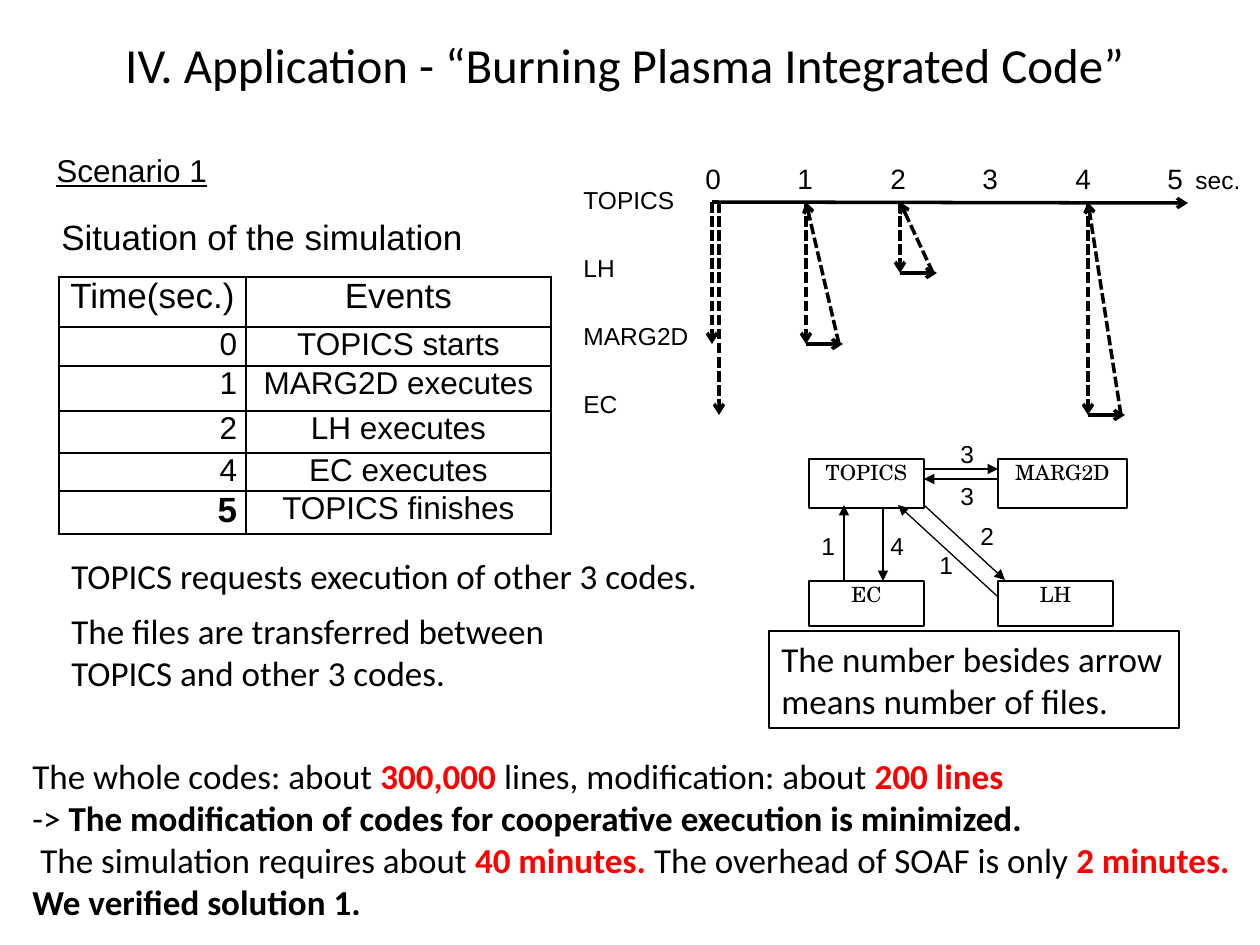
from lxml import etree
from pptx import Presentation
from pptx.dml.color import RGBColor
from pptx.enum.dml import MSO_LINE
from pptx.enum.shapes import MSO_CONNECTOR, MSO_SHAPE
from pptx.enum.text import MSO_ANCHOR, PP_ALIGN
from pptx.oxml.ns import qn
from pptx.util import Emu, Pt

PX = 914400 / 126
HEX = {"ink": "000000", "paper": "FFFFFF", "alert": "FF0000"}
SANS, BODY, SERIF = "Arial", "Calibri", "TeX Gyre Schola"
LEFT, MID, RIGHT = PP_ALIGN.LEFT, PP_ALIGN.CENTER, PP_ALIGN.RIGHT
TOP, CENTRE = MSO_ANCHOR.TOP, MSO_ANCHOR.MIDDLE
RECT, LINE, DASH = MSO_SHAPE.RECTANGLE, MSO_CONNECTOR.STRAIGHT, MSO_LINE.SQUARE_DOT


def px(n):
    return Emu(round(n * PX))


def rgb(name):
    return RGBColor.from_string(HEX[name])


def style(run, size, font, color="ink", bold=False):
    run.font.size, run.font.name, run.font.bold = Pt(size), font, bold
    run.font.color.rgb = rgb(color)


def fill_text(frame, text, size, font, align=LEFT, bold=False):
    frame.text = text
    for para in frame.paragraphs:
        para.alignment = align
        for run in para.runs:
            style(run, size, font, bold=bold)


def label(slide, box, text, size, font=SANS, align=LEFT, wrap=False, anchor=TOP):
    frame = slide.shapes.add_textbox(*map(px, box)).text_frame
    frame.word_wrap, frame.vertical_anchor = wrap, anchor
    fill_text(frame, text, size, font, align)
    return frame


def panel(slide, box, weight=0.75, fill=None):
    shape = slide.shapes.add_shape(RECT, *map(px, box))
    shape.shadow.inherit = False
    if fill:
        shape.fill.solid()
        shape.fill.fore_color.rgb = rgb(fill)
    else:
        shape.fill.background()
    shape.line.color.rgb, shape.line.width = rgb("ink"), Pt(weight)
    shape.text_frame.vertical_anchor = TOP
    return shape.text_frame


def arrow(slide, x, y, start, end, weight, head, dash=None):
    ends = (x + start[0], y + start[1], x + end[0], y + end[1])
    link = slide.shapes.add_connector(LINE, *map(px, ends))
    link.line.color.rgb, link.line.width = rgb("ink"), Pt(weight)
    if dash:
        link.line.dash_style = dash
    etree.SubElement(link.line._get_or_add_ln(), qn("a:tailEnd"), type=head)
    etree.SubElement(link._element.spPr, qn("a:effectLst"))


def edge_cell(cell):
    props = cell._tc.get_or_add_tcPr()
    for i, side in enumerate(("lnL", "lnR", "lnT", "lnB")):
        edge = etree.Element(qn("a:" + side), w=str(Pt(1)))
        paint = etree.SubElement(edge, qn("a:solidFill"))
        etree.SubElement(paint, qn("a:srgbClr"), val=HEX["ink"])
        props.insert(i, edge)


def add_events(slide, x, y):
    # Headings over the table
    frame = label(slide, (x - 15, y - 132, 178, 50), "Scenario 1", 18)
    frame.paragraphs[0].runs[0].font.underline = True
    label(slide, (x - 10, y - 68, 430, 55), "Situation of the simulation", 20)
    # Event table
    rows = [("Time(sec.)", "Events"), ("0", "TOPICS starts"),
            ("1", "MARG2D executes"), ("2", "LH executes"),
            ("4", "EC executes"), ("5", "TOPICS finishes")]
    highs, wides = (50, 39, 45, 42, 38, 43), (187, 305)
    grid = slide.shapes.add_table(
        len(rows), 2, px(x), px(y), px(sum(wides)), px(sum(highs))).table
    for col, wide in zip(grid.columns, wides):
        col.width = px(wide)
    for r, (row, high) in enumerate(zip(rows, highs)):
        grid.rows[r].height = px(high)
        for c, text in enumerate(row):
            cell = grid.cell(r, c)
            cell.margin_left = cell.margin_right = px(9)
            cell.margin_top = cell.margin_bottom = 0
            cell.fill.background()
            last = r == len(rows) - 1 and c == 0
            fill_text(cell.text_frame, text, 20 if r == 0 or last else 18, SANS,
                      RIGHT if r and c == 0 else MID, last)
            edge_cell(cell)


def add_times(slide, x, y):
    axis, lane, zero, tick = 47, 71, 141, 94
    # Lane names and second marks
    for i, (name, wide) in enumerate(
            (("TOPICS", 117), ("LH", 57), ("MARG2D", 131), ("EC", 60))):
        label(slide, (x, y + 24 + 68 * i, wide, 43), name, 14)
    for i in range(6):
        label(slide, (x + 122 + 185 * i // 2, y, 42, 48), str(i), 16)
    label(slide, (x + 612, y + 4, 71, 43), "sec.", 14)
    # Time axis and the two starts
    arrow(slide, x, y, (zero, axis), (617, axis + 1), 2, "arrow")
    for left, row in ((zero, 2), (zero + 7, 3)):
        arrow(slide, x, y, (left, axis), (left, axis + row * lane), 2, "arrow", DASH)
    # Each call goes down, runs and returns
    for sec, row in ((1, 2), (2, 1), (4, 3)):
        left, low = zero + sec * tick, axis + row * lane
        arrow(slide, x, y, (left, axis), (left, low), 2, "arrow", DASH)
        arrow(slide, x, y, (left, low), (left + 37, low), 2, "arrow")
        arrow(slide, x, y, (left + 33, low), (left, axis), 2, "arrow", DASH)


def add_files(slide, x, y):
    # Code boxes
    for name, left, top, wide, high, weight in (
            ("TOPICS", 0, 26, 115, 49, 1.25), ("MARG2D", 189, 26, 129, 49, 0.75),
            ("EC", 0, 148, 115, 45, 0.75), ("LH", 189, 148, 115, 45, 0.75)):
        frame = panel(slide, (x + left, y + top, wide, high), weight, "paper")
        frame.margin_left = frame.margin_right = px(10)
        frame.margin_top = frame.margin_bottom = px(1)
        fill_text(frame, name, 12, SERIF, MID)
    # Transfers, each with its number of files
    for start, end, count, left, top in (
            ((115, 36), (189, 36), 3, 139, 0), ((189, 46), (115, 46), 3, 139, 42),
            ((115, 72), (196, 147), 2, 159, 82), ((188, 163), (89, 72), 1, 118, 111),
            ((74, 75), (74, 148), 4, 69, 92), ((35, 147), (35, 72), 1, 0, 92)):
        arrow(slide, x, y, start, end, 0.75, "triangle")
        label(slide, (x + left, y + top, 39, 43), str(count), 14)
    # Key
    frame = panel(slide, (x - 40, y + 198, 410, 97))
    frame.word_wrap = False
    fill_text(frame, "The number besides arrow\nmeans number of files.", 20, BODY)


def add_notes(slide, x, y):
    label(slide, (x, y, 658, 55), "TOPICS requests execution of other 3 codes.", 20, BODY)
    label(slide, (x, y + 55, 504, 97),
          "The files are transferred between\vTOPICS and other 3 codes.", 20, BODY)


def add_sum(slide, box):
    # Each piece: text, colour, bold
    lines = [
        [("The whole codes: about ", "ink", False), ("300,000 ", "alert", True),
         ("lines, modification: about ", "ink", False), ("200 lines", "alert", True)],
        [("-> ", "ink", False),
         ("The modification of codes for cooperative execution is minimized.", "ink", True)],
        [(" The simulation requires about ", "ink", False), ("40 minutes. ", "alert", True),
         ("The overhead of SOAF is only ", "ink", False), ("2 minutes.", "alert", True)],
        [("We verified solution 1.", "ink", True)]]
    frame = slide.shapes.add_textbox(*map(px, box)).text_frame
    frame.word_wrap = True
    for i, line in enumerate(lines):
        para = frame.add_paragraph() if i else frame.paragraphs[0]
        for text, color, bold in line:
            run = para.add_run()
            run.text = text
            style(run, 20, BODY, color, bold)


def main():
    deck = Presentation()
    deck.slide_width, deck.slide_height = px(1260), px(945)
    slide = deck.slides.add_slide(deck.slide_layouts[6])
    label(slide, (0, 28, 1260, 72), "IV. Application - “Burning Plasma Integrated Code” ",
          28, BODY, MID, True, CENTRE)
    add_events(slide, 59, 277)
    add_notes(slide, 59, 548)
    add_times(slide, 571, 155)
    add_files(slide, 809, 433)
    add_sum(slide, (20, 748, 1230, 183))
    deck.save("out.pptx")


if __name__ == "__main__":
    main()
